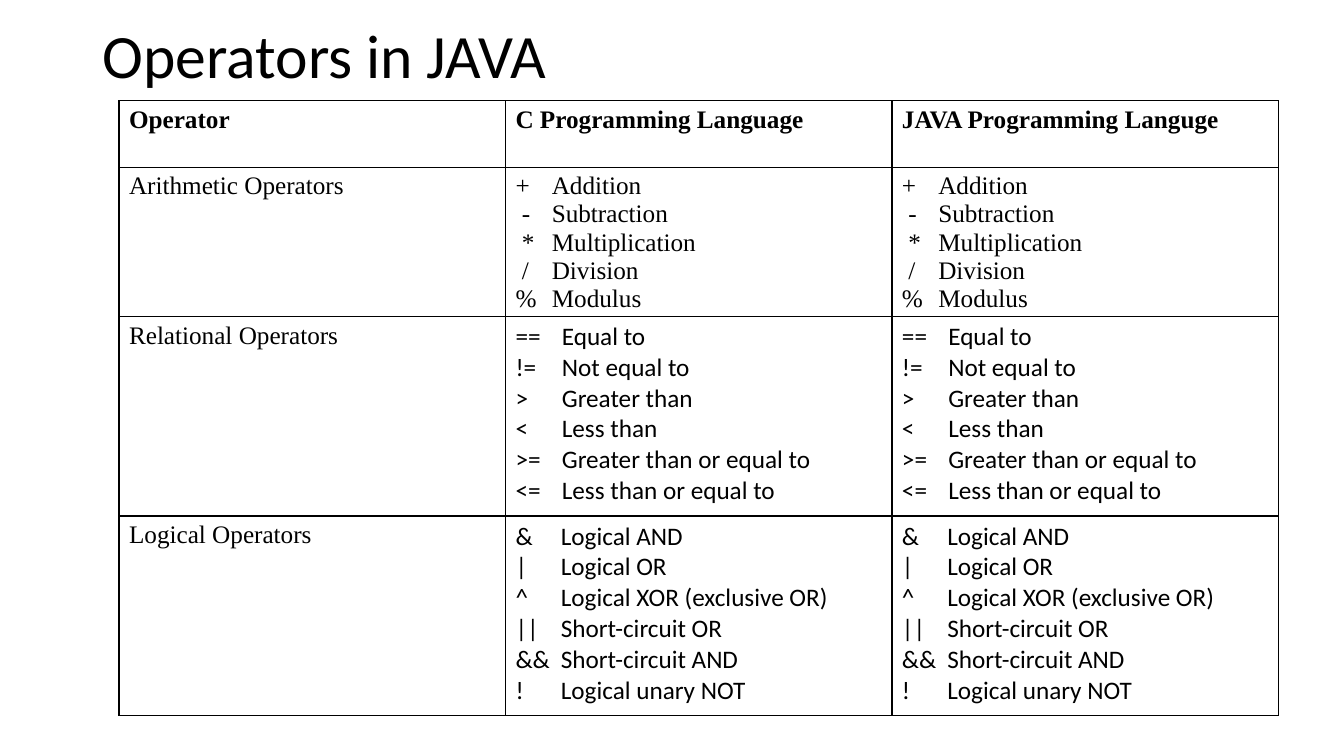
"""Builds a slide comparing the operators of C and Java in a table."""
from lxml import etree
from pptx import Presentation
from pptx.dml.color import RGBColor
from pptx.enum import text
from pptx.oxml import ns
from pptx.util import Inches, Pt

TITLE = "Operators in JAVA"
HEADS = ["Operator", "C Programming Language", "JAVA Programming Languge"]
GROUPS = [
    ("Arithmetic Operators", "serif", 0.36, 1.48, [
        ("+", "Addition"), (" -", "Subtraction"), (" *", "Multiplication"),
        (" /", "Division"), ("%", "Modulus")]),
    ("Relational Operators", "sans", 0.46, 1.98, [
        ("==", "Equal to"), ("!=", "Not equal to"), (">", "Greater than"),
        ("<", "Less than"), (">=", "Greater than or equal to"),
        ("<=", "Less than or equal to")]),
    ("Logical Operators", "sans", 0.45, 1.98, [
        ("&", "Logical AND"), ("|", "Logical OR"),
        ("^", "Logical XOR (exclusive OR)"), ("||", "Short-circuit OR"),
        ("&&", "Short-circuit AND"), ("!", "Logical unary NOT")]),
]
THEME = {"serif": "Times New Roman", "sans": "Calibri", "ink": "000000",
         "title": 44, "body": 18, "line": 1, "pitch": {"serif": 20, "sans": 22}}
LEFT, TOP, WIDE, HEAD = 1.18, 1, 11.5, 0.66


def add_run(para, words, face="serif", size="body", bold=False):
    run = para.add_run()
    run.text = words
    font = run.font
    font.name, font.size, font.bold = THEME[face], Pt(THEME[size]), bold
    font.color.rgb = RGBColor.from_string(THEME["ink"])


def add_tab(para, pos):
    tabs = etree.SubElement(para._p.get_or_add_pPr(), ns.qn("a:tabLst"))
    etree.SubElement(tabs, ns.qn("a:tab"), pos=str(Inches(pos)), algn="l")


def frame_cell(cell):
    props = cell._tc.get_or_add_tcPr()
    for side in ("lnL", "lnR", "lnT", "lnB"):
        line = etree.SubElement(props, ns.qn("a:" + side), w=str(Pt(THEME["line"])))
        fill = etree.SubElement(line, ns.qn("a:solidFill"))
        etree.SubElement(fill, ns.qn("a:srgbClr"), val=THEME["ink"])
    cell.fill.background()
    cell.margin_bottom = 0


def fill_list(frame, items, face, tab):
    for i, (sign, name) in enumerate(items):
        para = frame.add_paragraph() if i else frame.paragraphs[0]
        add_tab(para, tab)
        para.line_spacing = Pt(THEME["pitch"][face])
        add_run(para, sign + "\t" + name, face)


def add_title(slide):
    frame = slide.shapes.add_textbox(
        Inches(0.92), Inches(0.17), Inches(11.5), Inches(0.83)).text_frame
    frame.word_wrap = True
    frame.vertical_anchor = text.MSO_ANCHOR.MIDDLE
    para = frame.paragraphs[0]
    para.line_spacing = 0.9
    add_run(para, TITLE, "sans", "title")


def add_grid(slide):
    highs = [HEAD] + [group[3] for group in GROUPS]
    table = slide.shapes.add_table(
        len(highs), len(HEADS), Inches(LEFT), Inches(TOP),
        Inches(WIDE), Inches(sum(highs))).table
    table.first_row = table.horz_banding = False
    for col in table.columns:
        col.width = Inches(WIDE / len(HEADS))
    for row, high in zip(table.rows, highs):
        row.height = Inches(high)
        for cell in row.cells:
            frame_cell(cell)
    for c, head in enumerate(HEADS):
        add_run(table.cell(0, c).text_frame.paragraphs[0], head, bold=True)
    for r, (name, face, tab, _, items) in enumerate(GROUPS, 1):
        add_run(table.cell(r, 0).text_frame.paragraphs[0], name)
        for c in range(1, len(HEADS)):
            fill_list(table.cell(r, c).text_frame, items, face, tab)


def main():
    deck = Presentation()
    deck.slide_width, deck.slide_height = Inches(13.33), Inches(7.5)
    slide = deck.slides.add_slide(deck.slide_layouts[6])
    add_title(slide)
    add_grid(slide)
    deck.save("out.pptx")


if __name__ == "__main__":
    main()
